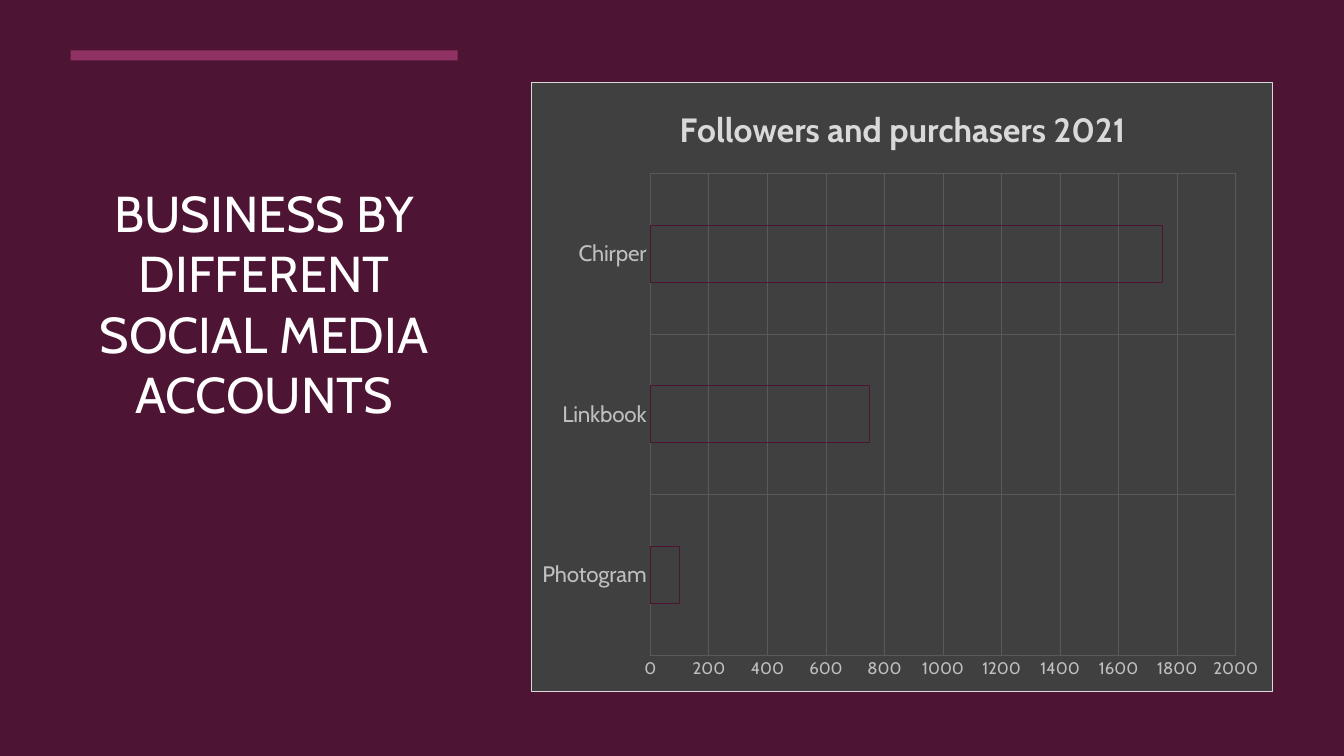
import pptx
import pptx.chart.data
import pptx.dml.color
import pptx.enum.chart
import pptx.enum.shapes
import pptx.enum.text
import pptx.oxml
import pptx.oxml.ns
import pptx.util
from pptx.util import Inches

FONT = "Cabin"
COLORS = {
    "background": "4D1434",
    "accent": "903163",
    "white": "FFFFFF",
    "panel": "404040",
    "border": "D9D9D9",
    "grid": "595959",
    "label": "BFBFBF",
}
FOLLOWERS = {"Photogram": 100, "Linkbook": 750, "Chirper": 1750}
CHART_TITLE = "Followers and purchasers 2021"


def rgb(name):
    return pptx.dml.color.RGBColor.from_string(COLORS[name])


def style_font(font, size, color, bold=False):
    font.name = FONT
    font.size = pptx.util.Pt(size)
    font.bold = bold
    font.color.rgb = rgb(color)


def style_line(line, color):
    line.color.rgb = rgb(color)
    line.width = pptx.util.Pt(0.75)


def add_rectangle(slide, left, top, width, height, color):
    shape = slide.shapes.add_shape(
        pptx.enum.shapes.MSO_SHAPE.RECTANGLE,
        Inches(left), Inches(top), Inches(width), Inches(height),
    )
    shape.shadow.inherit = False
    shape.fill.solid()
    shape.fill.fore_color.rgb = rgb(color)
    shape.line.fill.background()
    return shape


def add_heading(slide, left, top, width, height):
    add_rectangle(slide, left, top, width, 0.1, "accent")
    title = slide.shapes.title
    title.left, title.top = Inches(left), Inches(top + 0.44)
    title.width, title.height = Inches(width), Inches(height - 0.44)
    frame = title.text_frame
    frame.text = "BUSINESS BY DIFFERENT SOCIAL MEDIA ACCOUNTS"
    frame.word_wrap = True
    frame.auto_size = pptx.enum.text.MSO_AUTO_SIZE.NONE
    frame.vertical_anchor = pptx.enum.text.MSO_ANCHOR.MIDDLE
    paragraph = frame.paragraphs[0]
    paragraph.alignment = pptx.enum.text.PP_ALIGN.CENTER
    style_font(paragraph.runs[0].font, 36, "white")


def style_axis(axis, size):
    axis.major_tick_mark = pptx.enum.chart.XL_TICK_MARK.NONE
    axis.minor_tick_mark = pptx.enum.chart.XL_TICK_MARK.NONE
    axis.format.line.fill.background()
    axis.has_major_gridlines = True
    style_line(axis.major_gridlines.format.line, "grid")
    style_font(axis.tick_labels.font, size, "label")


def style_chart_area(chart):
    namespaces = pptx.oxml.ns.nsdecls("c", "a")
    area = pptx.oxml.parse_xml(
        f'<c:spPr {namespaces}>'
        f'<a:solidFill><a:srgbClr val="{COLORS["panel"]}"/></a:solidFill>'
        f'<a:ln w="9525"><a:solidFill><a:srgbClr val="{COLORS["border"]}"/>'
        '</a:solidFill></a:ln></c:spPr>'
    )
    chart.element.find(pptx.oxml.ns.qn("c:chart")).addnext(area)

    plot_area = chart.element.find(".//" + pptx.oxml.ns.qn("c:plotArea"))
    for layout in plot_area.findall(pptx.oxml.ns.qn("c:layout")):
        plot_area.remove(layout)
    fractions = {"x": 0.16, "y": 0.15, "w": 0.79, "h": 0.79}
    positions = "".join(f'<c:{key} val="{value}"/>' for key, value in fractions.items())
    plot_area.insert(0, pptx.oxml.parse_xml(
        f'<c:layout {namespaces}><c:manualLayout><c:layoutTarget val="inner"/>'
        f'<c:xMode val="edge"/><c:yMode val="edge"/>{positions}'
        '</c:manualLayout></c:layout>'
    ))


def add_followers_chart(slide, left, top, width, height):
    data = pptx.chart.data.CategoryChartData()
    data.categories = list(FOLLOWERS)
    data.add_series(CHART_TITLE, list(FOLLOWERS.values()))
    chart = slide.shapes.add_chart(
        pptx.enum.chart.XL_CHART_TYPE.BAR_CLUSTERED,
        Inches(left), Inches(top), Inches(width), Inches(height), data,
    ).chart
    style_font(chart.font, 10, "label")
    chart.has_legend = False
    chart.has_title = True
    chart.chart_title.include_in_layout = False
    title_frame = chart.chart_title.text_frame
    title_frame.text = CHART_TITLE
    style_font(title_frame.paragraphs[0].runs[0].font, 24, "border", True)

    style_axis(chart.category_axis, 16)
    style_axis(chart.value_axis, 12)
    chart.value_axis.minimum_scale = 0
    chart.value_axis.maximum_scale = 2000
    chart.value_axis.major_unit = 200

    plot = chart.plots[0]
    plot.gap_width = 182
    plot.overlap = -50
    plot.vary_by_categories = False
    bars = plot.series[0]
    bars.format.fill.background()
    style_line(bars.format.line, "background")
    style_chart_area(chart)


def main():
    presentation = pptx.Presentation()
    presentation.slide_width = Inches(13.33)
    presentation.slide_height = Inches(7.5)
    slide = presentation.slides.add_slide(presentation.slide_layouts[5])
    backdrop = add_rectangle(slide, 0, 0, 13.33, 7.5, "background")
    slide.shapes.title.element.addprevious(backdrop.element)
    add_heading(slide, 0.7, 0.5, 3.84, 4.57)
    add_followers_chart(slide, 5.27, 0.81, 7.36, 6.06)
    presentation.save("out.pptx")


if __name__ == "__main__":
    main()
